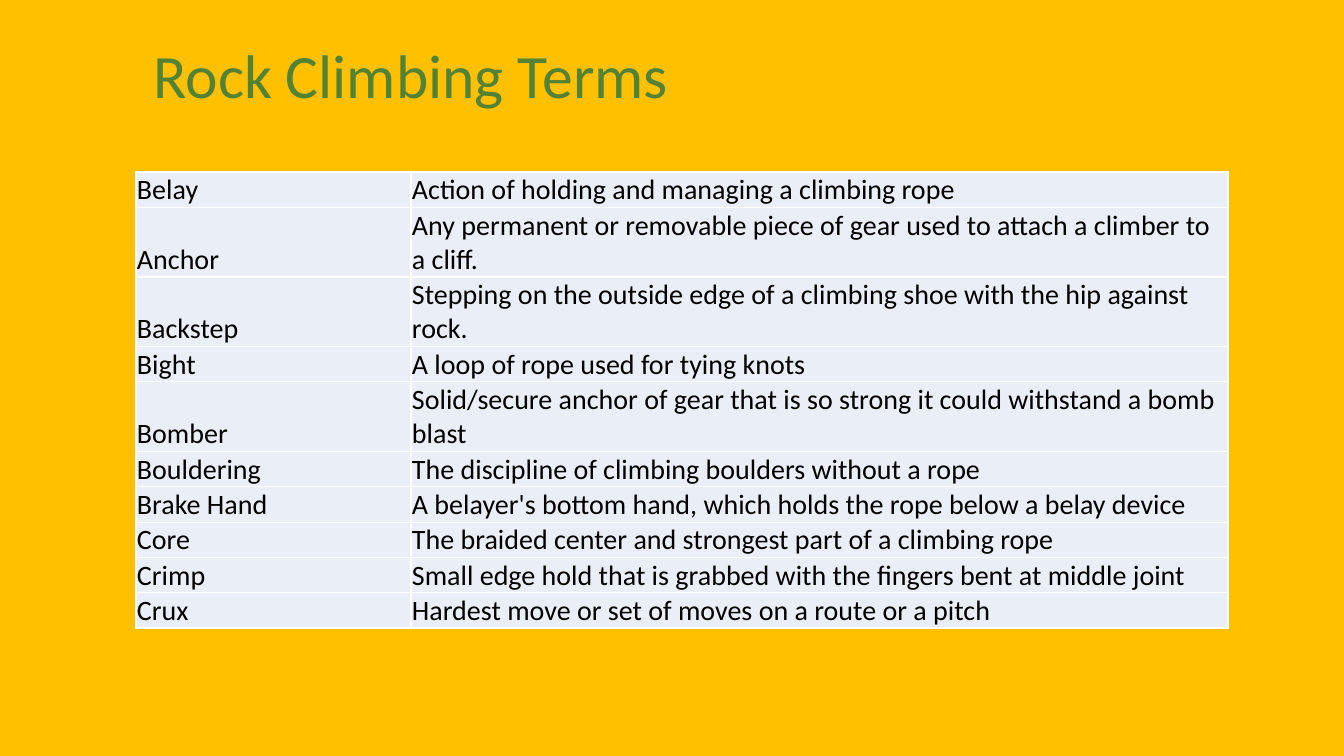
import pptx
import pptx.dml.color
import pptx.enum.text
import pptx.oxml
import pptx.oxml.ns
import pptx.util

EMU_PER_PX = 914400 / 100.8
FONT = "Calibri"
TERMS = [
    ("Belay", "Action of holding and managing a climbing rope"),
    ("Anchor", "Any permanent or removable piece of gear used to attach a climber to a cliff."),
    ("Backstep", "Stepping on the outside edge of a climbing shoe with the hip against rock."),
    ("Bight", "A loop of rope used for tying knots"),
    ("Bomber", "Solid/secure anchor of gear that is so strong it could withstand a bomb blast"),
    ("Bouldering", "The discipline of climbing boulders without a rope"),
    ("Brake Hand", "A belayer's bottom hand, which holds the rope below a belay device"),
    ("Core", "The braided center and strongest part of a climbing rope"),
    ("Crimp", "Small edge hold that is grabbed with the fingers bent at middle joint"),
    ("Crux", "Hardest move or set of moves on a route or a pitch"),
]
COLUMN_WIDTHS = [275, 817]
ROW_HEIGHTS = [28] * 3 + [32] * 7


def px(length):
    return pptx.util.Emu(round(length * EMU_PER_PX))


def color(code):
    return pptx.dml.color.RGBColor.from_string(code)


def apply(target, values):
    for name, value in values.items():
        setattr(target, name, value)


def write(frame, text, size, code):
    para = frame.paragraphs[0]
    span = para.add_run()
    span.text = text
    apply(span.font, {"name": FONT, "size": pptx.util.Pt(size)})
    span.font.color.rgb = color(code)
    return para


def add_title(page, text):
    title = page.shapes.title
    apply(title, {"left": px(93), "top": px(40), "width": px(1159), "height": px(146)})
    apply(title.text_frame, {
        "vertical_anchor": pptx.enum.text.MSO_ANCHOR.TOP,
        "auto_size": pptx.enum.text.MSO_AUTO_SIZE.NONE,
        "word_wrap": True,
    })
    para = write(title.text_frame, text, 44, "548235")
    apply(para, {"alignment": pptx.enum.text.PP_ALIGN.LEFT, "line_spacing": 0.9})


def add_borders(cell, code):
    # Border lines come before the fill in the cell properties
    properties = cell._tc.get_or_add_tcPr()
    for position, side in enumerate(("lnL", "lnR", "lnT", "lnB")):
        line = pptx.oxml.parse_xml(
            f'<a:{side} {pptx.oxml.ns.nsdecls("a")} w="12700"><a:solidFill>'
            f'<a:srgbClr val="{code}"/></a:solidFill></a:{side}>')
        properties.insert(position, line)


def fill_cell(cell, text):
    apply(cell, {
        "vertical_anchor": pptx.enum.text.MSO_ANCHOR.BOTTOM,
        "margin_left": px(1),
        "margin_right": px(1),
        "margin_top": px(1),
        "margin_bottom": 0,
    })
    cell.fill.solid()
    cell.fill.fore_color.rgb = color("EAEFF7")
    add_borders(cell, "FFFFFF")
    write(cell.text_frame, text, 20, "000000")


def add_terms_table(page):
    table = page.shapes.add_table(
        len(TERMS), len(COLUMN_WIDTHS), px(136), px(172), px(sum(COLUMN_WIDTHS)), px(445)).table
    apply(table, {"first_row": False, "horz_banding": False})
    for column, width in zip(table.columns, COLUMN_WIDTHS):
        column.width = px(width)
    for row, height, entry in zip(table.rows, ROW_HEIGHTS, TERMS):
        row.height = px(height)
        for cell, text in zip(row.cells, entry):
            fill_cell(cell, text)


def main():
    deck = pptx.Presentation()
    apply(deck, {"slide_width": px(1344), "slide_height": px(756)})
    page = deck.slides.add_slide(deck.slide_layouts[5])

    # Amber background
    page.background.fill.solid()
    page.background.fill.fore_color.rgb = color("FFC000")

    # Heading and glossary
    add_title(page, "\tRock Climbing Terms")
    add_terms_table(page)
    deck.save("out.pptx")


if __name__ == "__main__":
    main()
